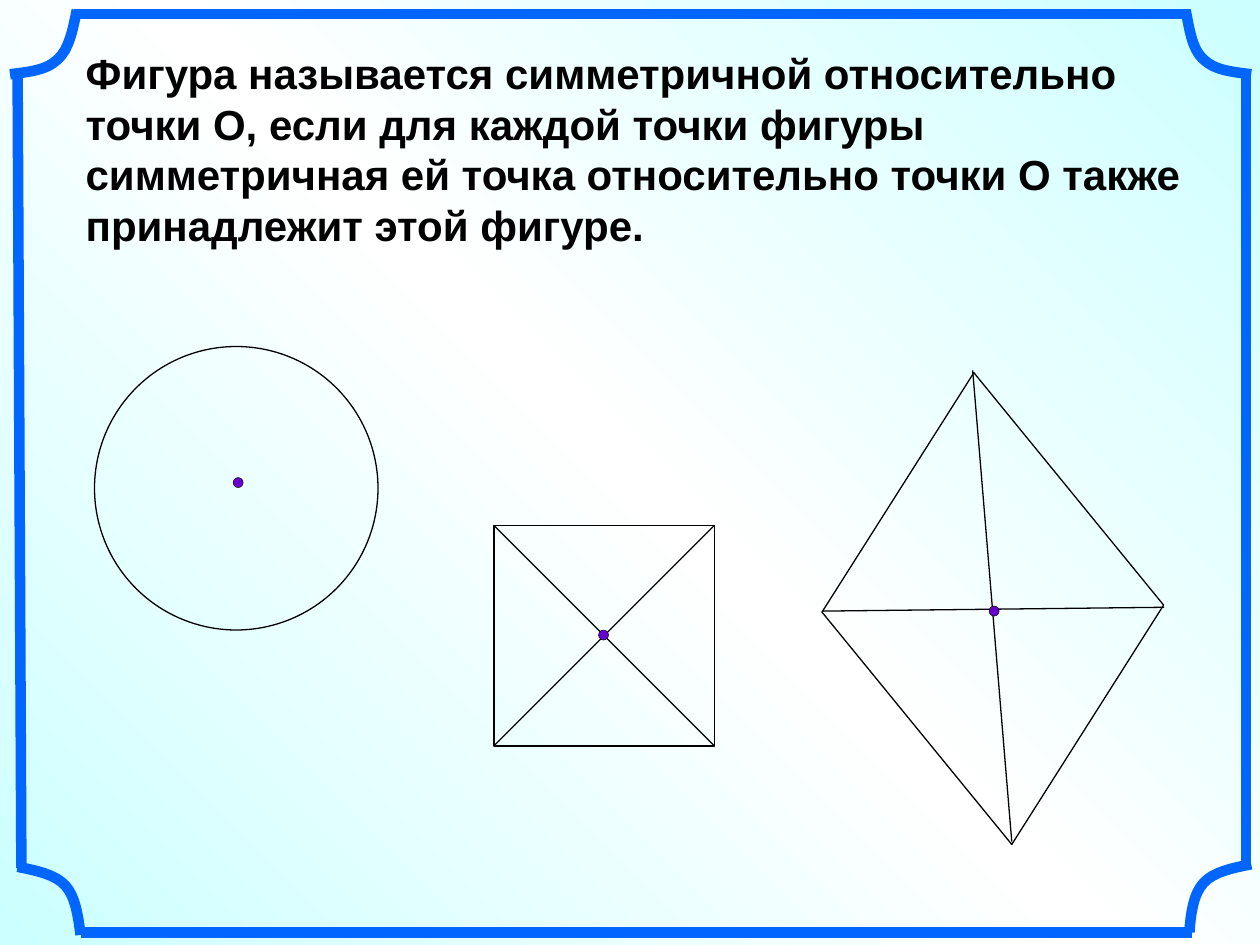
import copy
import pptx
import pptx.util
import pptx.dml.color
import pptx.enum.shapes
import pptx.enum.text
import pptx.oxml
import pptx.oxml.ns

RGB = pptx.dml.color.RGBColor
Inches = pptx.util.Inches
Pt = pptx.util.Pt
KIND = pptx.enum.shapes.MSO_SHAPE
BLUE = RGB(0x00, 0x66, 0xFF)
CYAN = RGB(0xCC, 0xFF, 0xFF)
WHITE = RGB(0xFF, 0xFF, 0xFF)
BLACK = RGB(0, 0, 0)
VIOLET = RGB(0x66, 0x00, 0xCC)

TEXT = ("Фигура называется симметричной относительно точки О, если для каждой "
        "точки фигуры симметричная ей точка относительно точки О также "
        "принадлежит этой фигуре.")
EDGES = [
    ((0.59, 0.11), (9.45, 0.11)),
    ((0.64, 7.4), (9.46, 7.4)),
    ((9.89, 0.59), (9.89, 6.89)),
    ((0.14, 0.59), (0.17, 6.89)),
]
CORNERS = [
    [(0.14, 6.88), (0.29, 6.91), (0.44, 6.94), (0.52, 7.03),
     (0.6, 7.12), (0.62, 7.27), (0.64, 7.42)],
    [(9.93, 6.86), (9.78, 6.89), (9.63, 6.92), (9.55, 7.01),
     (9.47, 7.1), (9.45, 7.25), (9.44, 7.4)],
    [(9.41, 0.08), (9.44, 0.23), (9.46, 0.39), (9.55, 0.47),
     (9.64, 0.56), (9.78, 0.57), (9.93, 0.59)],
    [(0.61, 0.08), (0.58, 0.23), (0.55, 0.39), (0.46, 0.47),
     (0.37, 0.56), (0.23, 0.57), (0.08, 0.59)],
]
FIGURES = [
    (KIND.OVAL, (0.75, 2.75, 2.25, 2.25), 0),
    (KIND.RECTANGLE, (3.92, 4.17, 1.75, 1.75), 0),
    (KIND.PARALLELOGRAM, (6.38, 3.7, 3, 2.26), 302.4),
]
SKEW = 0.332
DIAGONALS = [
    ((3.92, 4.17), (5.67, 5.92)),
    ((5.67, 4.17), (3.92, 5.92)),
    ((6.53, 4.85), (9.24, 4.82)),
    ((7.72, 2.94), (8.03, 6.68)),
]
CENTRES = [(1.85, 3.79), (4.75, 5), (7.85, 4.81)]
DOT = 0.08
STEPS = 8


def paint(slide):
    fill = slide.background.fill
    fill.gradient()
    fill.gradient_angle = 45
    stops = slide.element.find(".//" + pptx.oxml.ns.qn("a:gsLst"))
    stops.insert(1, copy.deepcopy(stops[0]))
    for stop, place, tint in zip(fill.gradient_stops, (0, 0.5, 1), (CYAN, WHITE, CYAN)):
        stop.position = place
        stop.color.rgb = tint


def stroke(item, color, width):
    item.line.color.rgb = color
    item.line.width = Pt(width)


def draw_line(slide, start, end, color, width):
    ends = [Inches(v) for v in start + end]
    line = slide.shapes.add_connector(pptx.enum.shapes.MSO_CONNECTOR.STRAIGHT, *ends)
    stroke(line, color, width)
    line._element.spPr.append(pptx.oxml.parse_xml(
        "<a:effectLst %s/>" % pptx.oxml.ns.nsdecls("a")))


def draw_shape(slide, kind, box, width, fill=None):
    shape = slide.shapes.add_shape(kind, *[Inches(v) for v in box])
    shape.shadow.inherit = False
    if fill is None:
        shape.fill.background()
    else:
        shape.fill.solid()
        shape.fill.fore_color.rgb = fill
    stroke(shape, BLACK, width)
    return shape


def bezier(knots, t):
    u = 1 - t
    parts = (u ** 3, 3 * u * u * t, 3 * u * t * t, t ** 3)
    return tuple(Inches(sum(w * k[axis] for w, k in zip(parts, knots)))
                 for axis in (0, 1))


def draw_curve(slide, knots):
    spots = [bezier(knots[first:first + 4], step / STEPS)
             for first in (0, 3) for step in range(1, STEPS + 1)]
    path = slide.shapes.build_freeform(*[Inches(v) for v in knots[0]])
    path.add_line_segments(spots, close=False)
    curve = path.convert_to_shape()
    curve.shadow.inherit = False
    curve.fill.background()
    stroke(curve, BLUE, 6)


def write_title(slide):
    title = slide.shapes.title
    title.left, title.top, title.width, title.height = map(Inches, (0.58, 0.33, 9.08, 1.7))
    frame = title.text_frame
    frame.text = TEXT
    frame.word_wrap = True
    frame.auto_size = pptx.enum.text.MSO_AUTO_SIZE.NONE
    frame.vertical_anchor = pptx.enum.text.MSO_ANCHOR.TOP
    para = frame.paragraphs[0]
    para.alignment = pptx.enum.text.PP_ALIGN.LEFT
    para.line_spacing = 1.0
    para.space_before = Pt(0)
    font = para.runs[0].font
    font.name, font.size, font.bold = "Arial", Pt(24), True
    font.color.rgb = BLACK


def main():
    deck = pptx.Presentation()
    deck.slide_width, deck.slide_height = Inches(10), Inches(7.5)
    slide = deck.slides.add_slide(deck.slide_layouts[5])
    paint(slide)
    write_title(slide)
    for start, end in EDGES:
        draw_line(slide, start, end, BLUE, 6)
    for knots in CORNERS:
        draw_curve(slide, knots)
    for kind, box, turn in FIGURES:
        shape = draw_shape(slide, kind, box, 0.75)
        shape.rotation = turn
        if kind == KIND.PARALLELOGRAM:
            shape.adjustments[0] = SKEW
    for start, end in DIAGONALS:
        draw_line(slide, start, end, BLACK, 0.75)
    for left, top in CENTRES:
        draw_shape(slide, KIND.OVAL, (left, top, DOT, DOT), 0.25, VIOLET)
    deck.save("out.pptx")


if __name__ == "__main__":
    main()
